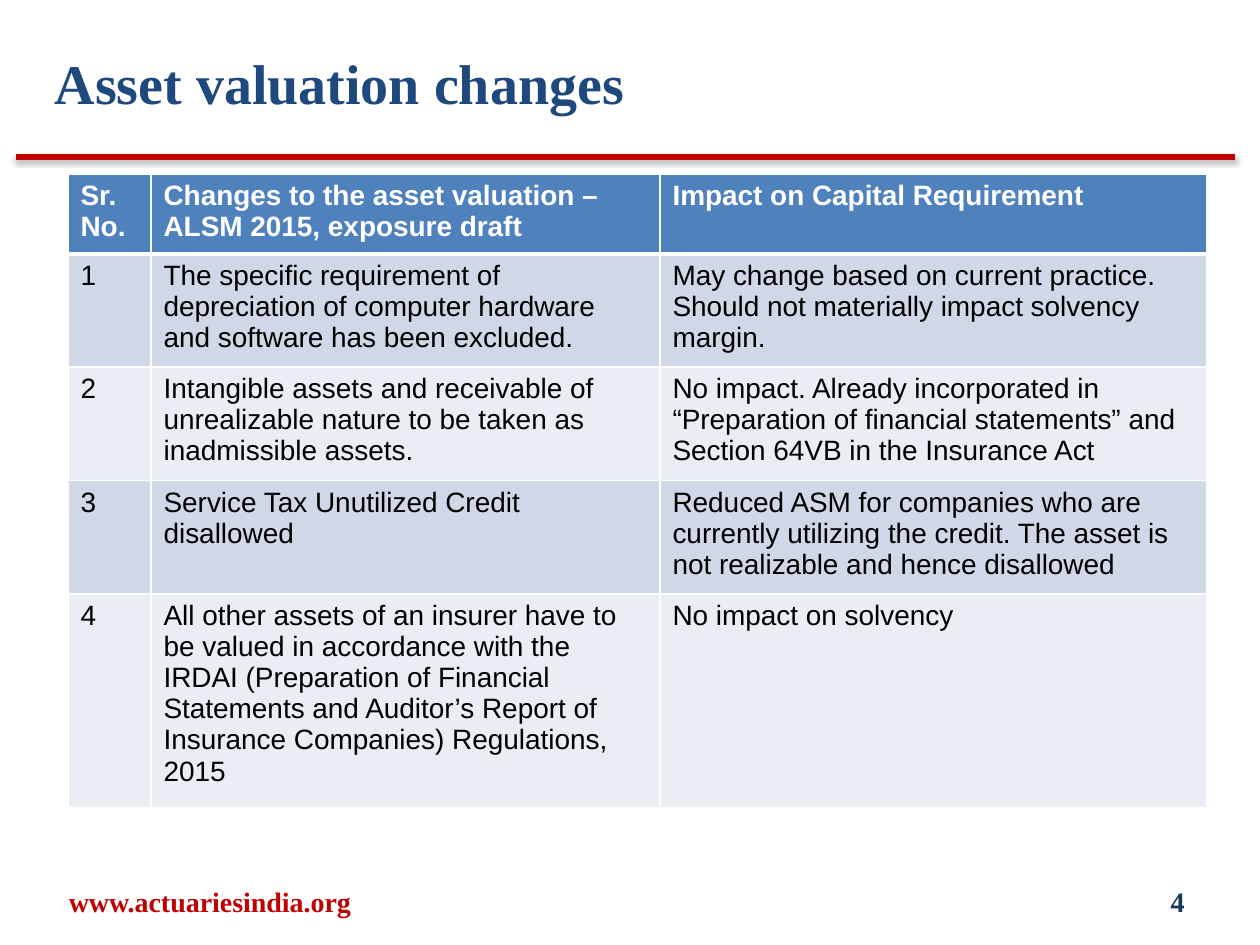
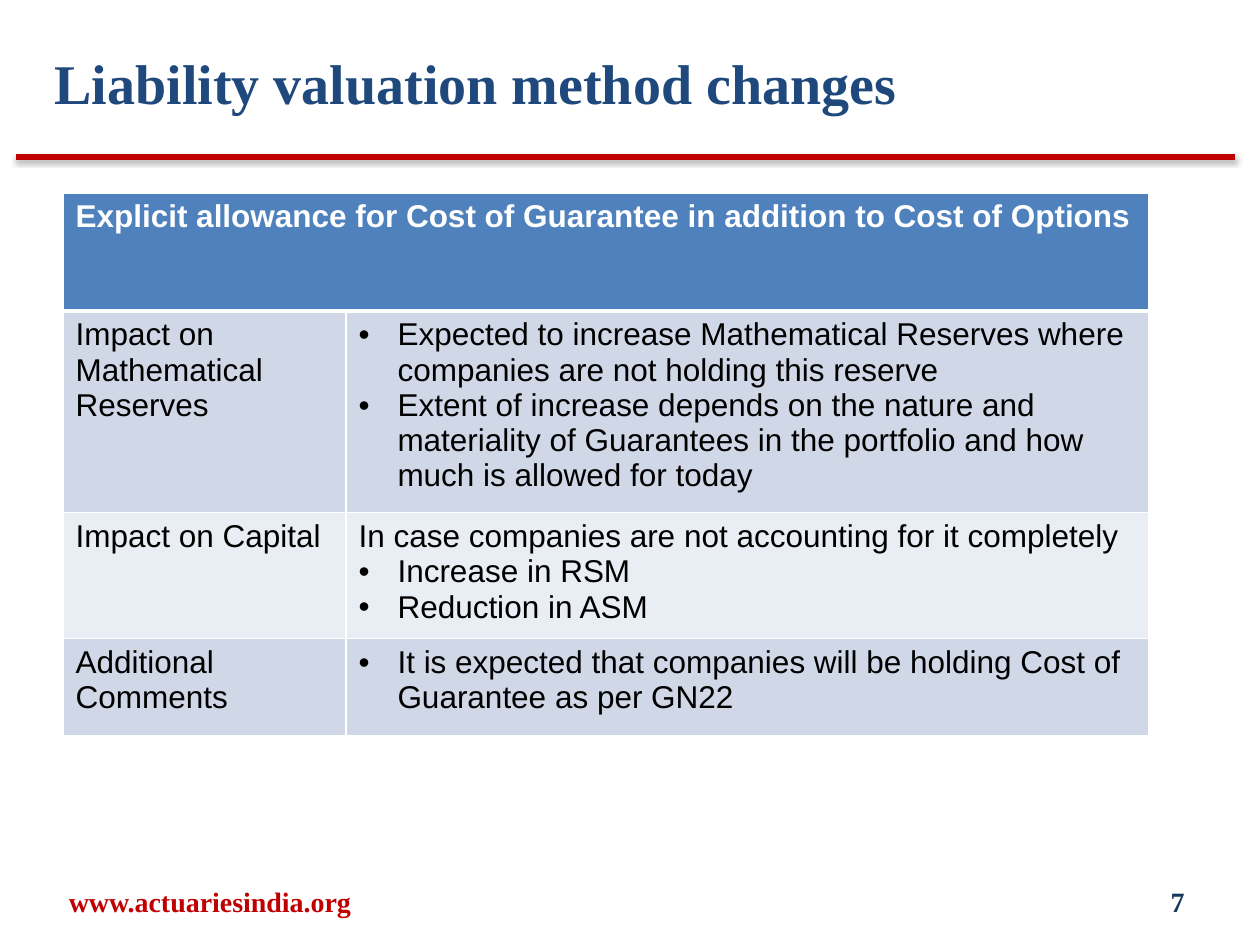
from dataclasses import dataclass

from lxml import etree
from pptx import Presentation
from pptx import util as u
from pptx.dml import color
from pptx.enum import shapes, text
from pptx.oxml import ns

# Shared look
PX_PER_INCH = 126
SERIF, SANS = "Times New Roman", "Arial"
RED, NAVY, TITLE_BLUE = "C00000", "17375E", "1F497D"
HEADER_BLUE, BAND_DARK, BAND_LIGHT = "4F81BD", "D0D8E8", "E9EDF4"
WHITE, BLACK = "FFFFFF", "000000"
BULLET_INDENT = 39
TITLE_ONLY = 5


@dataclass(frozen=True)
class Box:
    left: int
    top: int
    width: int
    height: int


@dataclass(frozen=True)
class Style:
    font: str
    size: int
    color: str
    bold: bool = False


@dataclass(frozen=True)
class Line:
    words: str
    bulleted: bool = False


@dataclass(frozen=True)
class TableSlide:
    title: str
    number: str
    left: int
    top: int
    columns: list[int]
    row_heights: list[int]
    text_size: int
    rows: list[list[list[Line]]]  # rows, cells, lines; a lone cell spans its row


TITLE_BOX = Box(42, 42, 1207, 84)
SITE_BOX = Box(10, 876, 400, 50)
NUMBER_BOX = Box(903, 876, 294, 50)


def px(length: int) -> u.Emu:
    return u.Emu(round(length * 914400 / PX_PER_INCH))


def rgb(value: str) -> color.RGBColor:
    return color.RGBColor.from_string(value)


def plain(*lines: str) -> list[Line]:
    return [Line(words) for words in lines]


def bullets(*lines: str) -> list[Line]:
    return [Line(words, True) for words in lines]


def add_xml(parent, tag: str, **attributes):
    values = {name: str(value) for name, value in attributes.items()}
    return etree.SubElement(parent, ns.qn(tag), values)


def add_run(paragraph, words: str, style: Style) -> None:
    run = paragraph.add_run()
    run.text = words
    run.font.name = style.font
    run.font.size = u.Pt(style.size)
    run.font.bold = style.bold
    run.font.color.rgb = rgb(style.color)


def place(shape, box: Box) -> None:
    shape.left, shape.top = px(box.left), px(box.top)
    shape.width, shape.height = px(box.width), px(box.height)


def add_title(slide, words: str) -> None:
    title = slide.shapes.title
    place(title, TITLE_BOX)
    frame = title.text_frame
    frame.auto_size = text.MSO_AUTO_SIZE.NONE
    frame.vertical_anchor = text.MSO_ANCHOR.TOP
    paragraph = frame.paragraphs[0]
    paragraph.alignment = text.PP_ALIGN.LEFT
    add_run(paragraph, words, Style(SERIF, 32, TITLE_BLUE, True))


def add_rule(slide) -> None:
    rule = slide.shapes.add_connector(
        shapes.MSO_CONNECTOR.STRAIGHT, px(16), px(157), px(1235), px(157))
    rule.line.color.rgb = rgb(RED)
    rule.line.width = u.Pt(3)
    effects = add_xml(rule._element.spPr, "a:effectLst")
    shadow = add_xml(effects, "a:outerShdw", blurRad=u.Pt(3.1), dist=u.Pt(1.6),
                     dir=90 * 60000, rotWithShape=0)
    add_xml(add_xml(shadow, "a:srgbClr", val=BLACK), "a:alpha", val=38000)


def add_footer_text(slide, box: Box, words: str, ink: str, alignment) -> None:
    shape = slide.shapes.add_textbox(0, 0, 0, 0)
    place(shape, box)
    frame = shape.text_frame
    frame.word_wrap = True
    frame.vertical_anchor = text.MSO_ANCHOR.MIDDLE
    paragraph = frame.paragraphs[0]
    paragraph.alignment = alignment
    add_run(paragraph, words, Style(SERIF, 16, ink, True))


def add_borders(cell, row: int) -> None:
    """White grid, with a heavier line under the header row."""
    widths = {"L": 1, "R": 1, "T": 3 if row == 1 else 1, "B": 3 if row == 0 else 1}
    properties = cell._tc.get_or_add_tcPr()
    for side, width in widths.items():
        border = add_xml(properties, f"a:ln{side}", w=u.Pt(width))
        add_xml(add_xml(border, "a:solidFill"), "a:srgbClr", val=WHITE)


def fill_cell(cell, lines: list[Line], style: Style) -> None:
    frame = cell.text_frame
    for index, line in enumerate(lines):
        paragraph = frame.add_paragraph() if index else frame.paragraphs[0]
        if line.bulleted:
            properties = paragraph._p.get_or_add_pPr()
            properties.set("marL", str(px(BULLET_INDENT)))
            properties.set("indent", str(-px(BULLET_INDENT)))
            add_xml(properties, "a:buFont", typeface=SANS)
            add_xml(properties, "a:buChar", char="•")
        add_run(paragraph, line.words, style)


def add_table(slide, content: TableSlide) -> None:
    table = slide.shapes.add_table(
        len(content.rows), len(content.columns), px(content.left), px(content.top),
        px(sum(content.columns)), px(sum(content.row_heights))).table
    table.horz_banding = False
    for column, width in zip(table.columns, content.columns):
        column.width = px(width)
    for index, (row, height) in enumerate(zip(table.rows, content.row_heights)):
        row.height = px(height)
        header = index == 0
        band = HEADER_BLUE if header else BAND_DARK if index % 2 else BAND_LIGHT
        for cell in row.cells:
            add_borders(cell, index)
            cell.fill.solid()
            cell.fill.fore_color.rgb = rgb(band)
        cells = list(row.cells)
        if len(content.rows[index]) == 1:
            cells[0].merge(cells[-1])
        style = Style(SANS, content.text_size, WHITE if header else BLACK, header)
        for cell, lines in zip(cells, content.rows[index]):
            fill_cell(cell, lines, style)


def add_slide(presentation, content: TableSlide) -> None:
    slide = presentation.slides.add_slide(presentation.slide_layouts[TITLE_ONLY])
    add_rule(slide)
    add_footer_text(slide, SITE_BOX, "www.actuariesindia.org", RED, text.PP_ALIGN.CENTER)
    add_footer_text(slide, NUMBER_BOX, content.number, NAVY, text.PP_ALIGN.RIGHT)
    add_title(slide, content.title)
    add_table(slide, content)


# Slide content
ASSETS = TableSlide(
    "Asset valuation changes", "4", 68, 174, [83, 509, 547],
    [74, 106, 106, 106, 199], 16,
    [
        [plain("Sr. No."),
         plain("Changes to the asset valuation – ALSM 2015, exposure draft"),
         plain("Impact on Capital Requirement")],
        [plain("1"),
         plain("The specific requirement of depreciation of computer hardware "
               "and software has been excluded."),
         plain("May change based on current practice.",
               "Should not materially impact solvency margin.")],
        [plain("2"),
         plain("Intangible assets and receivable of unrealizable nature to be "
               "taken as inadmissible assets."),
         plain("No impact. Already incorporated in “Preparation of financial "
               "statements” and Section 64VB in the Insurance Act")],
        [plain("3"),
         plain("Service Tax Unutilized Credit disallowed"),
         plain("Reduced ASM for companies who are currently utilizing the credit. "
               "The asset is not realizable and hence disallowed")],
        [plain("4"),
         plain("All other assets of an insurer have to be valued in accordance "
               "with the IRDAI (Preparation of Financial Statements and Auditor’s "
               "Report of Insurance Companies) Regulations, 2015"),
         plain("No impact on solvency")],
    ])

LIABILITIES = TableSlide(
    "Liability valuation method changes", "7", 63, 193, [283, 803],
    [118, 189, 118, 97], 18,
    [
        [plain("Explicit allowance for Cost of Guarantee in addition to Cost of Options")],
        [plain("Impact on Mathematical Reserves"),
         bullets("Expected to increase Mathematical Reserves where companies are "
                 "not holding this reserve",
                 "Extent of increase depends on the nature and materiality of "
                 "Guarantees in the portfolio and how much is allowed for today")],
        [plain("Impact on Capital"),
         plain("In case companies are not accounting for it completely")
         + bullets("Increase in RSM", "Reduction in ASM")],
        [plain("Additional Comments"),
         bullets("It is expected that companies will be holding Cost of Guarantee "
                 "as per GN22")],
    ])


def main() -> None:
    presentation = Presentation()
    presentation.slide_width, presentation.slide_height = px(1260), px(945)
    for content in (ASSETS, LIABILITIES):
        add_slide(presentation, content)
    presentation.save("out.pptx")


if __name__ == "__main__":
    main()
